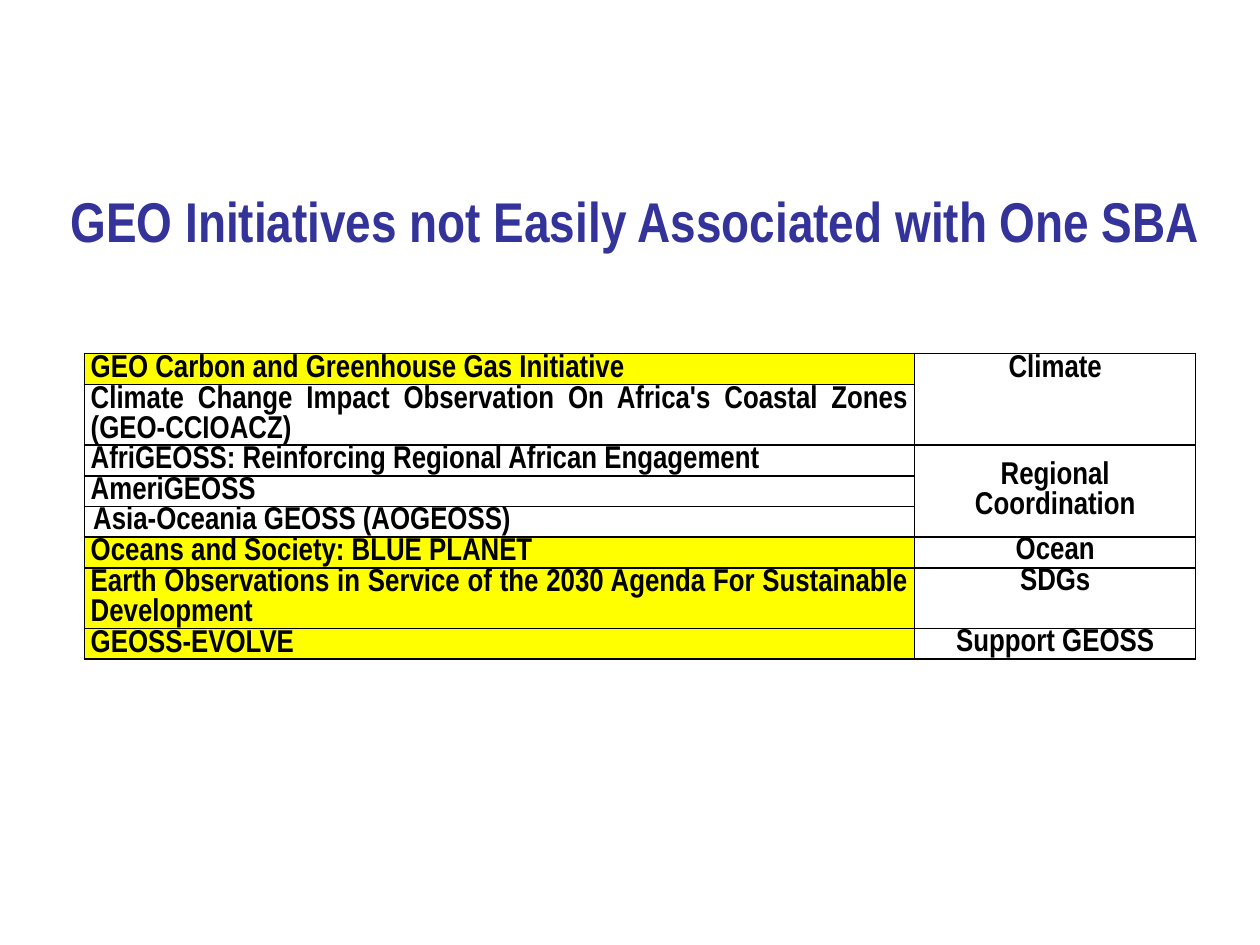
from dataclasses import dataclass

from lxml.etree import SubElement
from pptx import Presentation
from pptx.dml.color import RGBColor
from pptx.enum.text import MSO_ANCHOR as Anchor, PP_ALIGN as Align
from pptx.oxml.ns import qn
from pptx.util import Inches, Pt


@dataclass(frozen=True)
class Theme:
    font: str = "Arial Narrow"
    title_color: str = "333399"
    ink: str = "000000"
    highlight: str = "FFFF00"
    paper: str = "FFFFFF"
    title_size: float = 32
    body_size: float = 18
    border: float = 1
    line_spacing: float = 1.0
    space_after: float = 6


@dataclass(frozen=True)
class Entry:
    text: str
    align: Align = Align.LEFT
    fill: str | None = None
    side: float = 0.05
    top: float = 0.01
    anchor: Anchor = Anchor.TOP
    span: int = 1
    lines: int = 1


THEME = Theme()
SLIDE_WIDTH, SLIDE_HEIGHT = Inches(10), Inches(7.5)
LINE_HEIGHT = 0.24
COLUMN_WIDTHS = (6.59, 2.23)
TITLE = "GEO Initiatives not Easily Associated with One SBA"

INITIATIVES = [
    Entry("GEO Carbon and Greenhouse Gas Initiative", fill=THEME.highlight),
    Entry("Climate Change Impact Observation On Africa's Coastal Zones (GEO-CCIOACZ)",
          Align.JUSTIFY, lines=2),
    Entry("AfriGEOSS: Reinforcing Regional African Engagement", Align.JUSTIFY),
    Entry("AmeriGEOSS"),
    Entry("Asia-Oceania GEOSS (AOGEOSS)", side=0.07, top=0),
    Entry("Oceans and Society: BLUE PLANET", fill=THEME.highlight),
    Entry("Earth Observations in Service of the 2030 Agenda For Sustainable Development",
          Align.JUSTIFY, THEME.highlight, lines=2),
    Entry("GEOSS-EVOLVE", Align.JUSTIFY, THEME.highlight),
]
AREAS = [
    Entry("Climate", Align.CENTER, span=2),
    Entry("Regional Coordination", Align.CENTER, anchor=Anchor.MIDDLE, span=3),
    Entry("Ocean", Align.CENTER, side=0.07, top=0),
    Entry("SDGs", Align.CENTER, THEME.paper, side=0.07, top=0),
    Entry("Support GEOSS", Align.CENTER, THEME.paper, side=0.07, top=0),
]


def add_run(paragraph, text: str, size: float, color: str) -> None:
    """Add one bold run in the theme font."""
    run = paragraph.add_run()
    run.text = text
    run.font.name, run.font.size, run.font.bold = THEME.font, Pt(size), True
    run.font.color.rgb = RGBColor.from_string(color)


def add_title(slide) -> None:
    """Place and fill the title placeholder."""
    title = slide.shapes.title
    title.left, title.top = int(SLIDE_WIDTH * 0.042), SLIDE_HEIGHT // 6
    title.width, title.height = int(SLIDE_WIDTH * 0.925), Inches(1)
    title.text_frame.vertical_anchor = Anchor.MIDDLE
    paragraph = title.text_frame.paragraphs[0]
    paragraph.alignment = Align.CENTER
    add_run(paragraph, TITLE, THEME.title_size, THEME.title_color)


def style_cell(cell) -> None:
    """Draw all four borders and leave the cell unfilled."""
    properties = cell._tc.get_or_add_tcPr()
    for side in ("a:lnL", "a:lnR", "a:lnT", "a:lnB"):
        border = SubElement(properties, qn(side), w=str(Pt(THEME.border)))
        SubElement(SubElement(border, qn("a:solidFill")), qn("a:srgbClr"), val=THEME.ink)
    cell.fill.background()


def fill_cell(cell, entry: Entry) -> None:
    """Write one entry with its fill, insets and alignment."""
    if entry.fill:
        cell.fill.solid()
        cell.fill.fore_color.rgb = RGBColor.from_string(entry.fill)
    cell.margin_left = cell.margin_right = Inches(entry.side)
    cell.margin_top, cell.margin_bottom = Inches(entry.top), 0
    cell.vertical_anchor = entry.anchor
    paragraph = cell.text_frame.paragraphs[0]
    paragraph.alignment = entry.align
    paragraph.line_spacing = THEME.line_spacing
    if entry.align != Align.LEFT:
        paragraph.space_after = Pt(THEME.space_after)
    add_run(paragraph, entry.text, THEME.body_size, THEME.ink)


def add_initiatives(slide) -> None:
    """Build the table of initiatives and their areas."""
    height = LINE_HEIGHT * sum(entry.lines for entry in INITIATIVES)
    table = slide.shapes.add_table(
        len(INITIATIVES), len(COLUMN_WIDTHS), int(SLIDE_WIDTH * 0.067),
        int(SLIDE_HEIGHT * 0.374), Inches(sum(COLUMN_WIDTHS)), Inches(height)).table
    table.first_row = table.horz_banding = False
    for column, width in zip(table.columns, COLUMN_WIDTHS):
        column.width = Inches(width)
    for cell in table.iter_cells():
        style_cell(cell)
    for index, entry in enumerate(INITIATIVES):
        table.rows[index].height = Inches(LINE_HEIGHT * entry.lines)
        fill_cell(table.cell(index, 0), entry)
    first = 0
    for area in AREAS:
        cell = table.cell(first, 1)
        if area.span > 1:
            cell.merge(table.cell(first + area.span - 1, 1))
        fill_cell(cell, area)
        first += area.span


def main() -> None:
    """Build and save the slide."""
    deck = Presentation()
    deck.slide_width, deck.slide_height = SLIDE_WIDTH, SLIDE_HEIGHT
    slide = deck.slides.add_slide(deck.slide_layouts[5])
    add_title(slide)
    add_initiatives(slide)
    deck.save("out.pptx")


if __name__ == "__main__":
    main()
